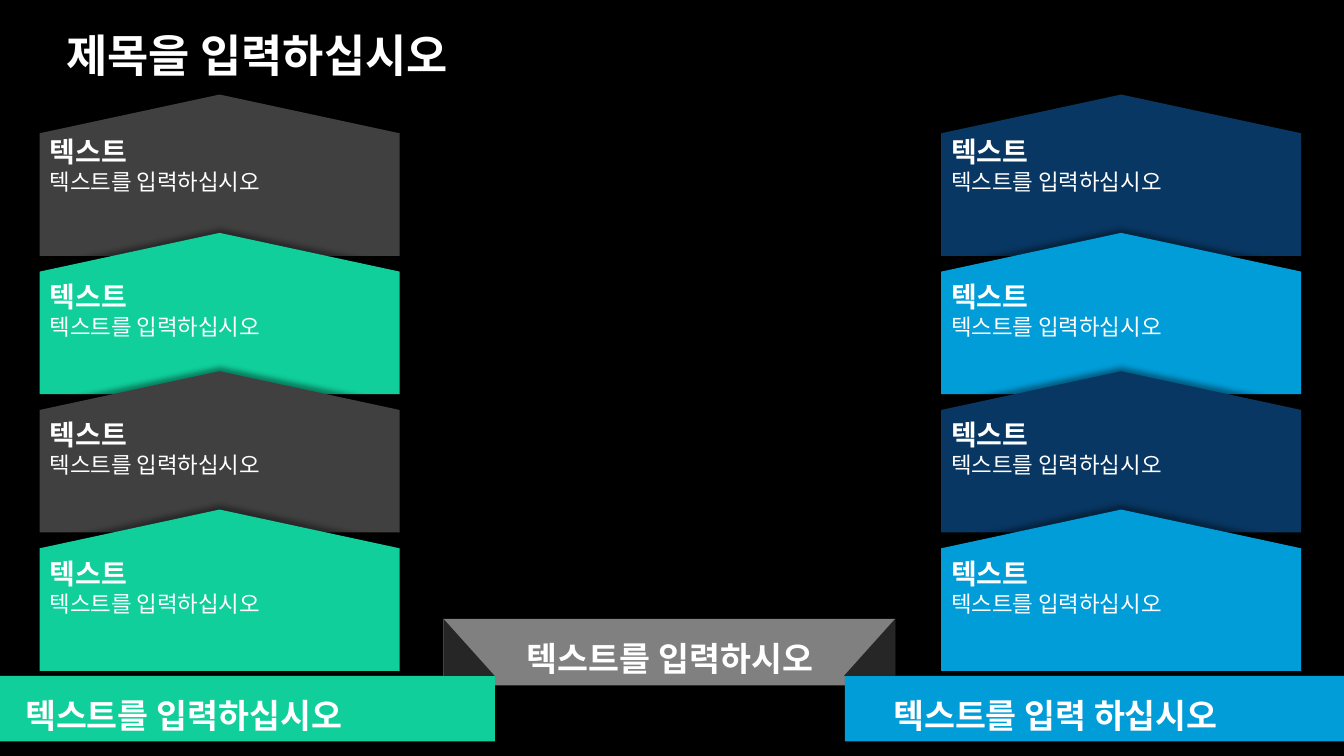
"""Build a slide with two stacked arrow pillars and three labelled bands."""
import pptx
import pptx.util
import pptx.dml.color
import pptx.enum.shapes
import pptx.enum.text
import pptx.oxml
import pptx.oxml.ns
from dataclasses import dataclass

Shape = pptx.enum.shapes.MSO_SHAPE
Align = pptx.enum.text.PP_ALIGN
AutoSize = pptx.enum.text.MSO_AUTO_SIZE


@dataclass(frozen=True)
class Theme:
    font: str = "Calibri"
    background: str = "000000"
    text: str = "FFFFFF"
    gray: str = "808080"
    fold: str = "262626"
    charcoal: str = "404040"
    green: str = "10CF9B"
    navy: str = "083763"
    blue: str = "009DD9"
    title_size: int = 32
    band_size: int = 24
    heading_size: int = 20
    body_size: int = 16


theme = Theme()
deck = pptx.Presentation()
deck.slide_width = pptx.util.Inches(13.33)
deck.slide_height = pptx.util.Inches(7.5)
column = deck.slide_width / 100
row = deck.slide_height / 100
page = deck.slides.add_slide(deck.slide_layouts[5])
page.background.fill.solid()
page.background.fill.fore_color.rgb = pptx.dml.color.RGBColor.from_string(theme.background)


def add_block(kind, left, top, width, height, color):
    """Add a plain filled shape, measured in columns and rows."""
    block = page.shapes.add_shape(
        kind, round(left * column), round(top * row), round(width * column), round(height * row))
    block.shadow.inherit = False
    block.fill.solid()
    block.fill.fore_color.rgb = pptx.dml.color.RGBColor.from_string(color)
    block.line.fill.background()
    return block


def write_lines(box, lines, spacing=1.0, align=Align.LEFT):
    """Write (text, size, bold) lines into a box."""
    frame = box.text_frame
    frame.text = "\n".join(text for text, size, bold in lines)
    for para, (text, size, bold) in zip(frame.paragraphs, lines):
        para.alignment = align
        para.line_spacing = spacing
        for span in para.runs:
            span.font.name = theme.font
            span.font.size = pptx.util.Pt(size)
            span.font.bold = bold
            span.font.color.rgb = pptx.dml.color.RGBColor.from_string(theme.text)


title = page.shapes.title
title.left, title.top = round(4.2 * column), round(2.93 * row)
title.width, title.height = round(91.6 * column), round(9.47 * row)
title.text_frame.auto_size = AutoSize.NONE
title.text_frame.vertical_anchor = pptx.enum.text.MSO_ANCHOR.MIDDLE
write_lines(title, [("제목을 입력하십시오", theme.title_size, True)], 0.9)

pillar_width, tier_height, tier_step, first_tier = 26.78, 21.33, 18.3, 12.5
pillars = [
    (70.03, (theme.navy, theme.blue)),
    (2.95, (theme.charcoal, theme.green)),
]
tier_lines = [
    ("텍스트", theme.heading_size, True),
    ("텍스트를 입력하십시오", theme.body_size, False),
]
shadow_xml = (
    f'<a:outerShdw {pptx.oxml.ns.nsdecls("a")} blurRad="50800" dist="38100" dir="16200000"'
    ' rotWithShape="0"><a:srgbClr val="000000"><a:alpha val="40000"/></a:srgbClr></a:outerShdw>')

for left, colors in pillars:
    for tier in range(4):
        top = first_tier + tier * tier_step
        arrow = add_block(Shape.PENTAGON, left, top, pillar_width, tier_height, colors[tier % 2])
        center_x, center_y = arrow.left + arrow.width // 2, arrow.top + arrow.height // 2
        arrow.width, arrow.height = arrow.height, arrow.width
        arrow.left, arrow.top = center_x - arrow.width // 2, center_y - arrow.height // 2
        arrow.rotation = 270
        arrow.adjustments[0] = 0.24
        effects = arrow.element.spPr.find(pptx.oxml.ns.qn("a:effectLst"))
        effects.append(pptx.oxml.parse_xml(shadow_xml))

        inset = 5.5 if tier else 4.7
        box = page.shapes.add_textbox(
            round(left * column), round((top + inset) * row),
            round(pillar_width * column), round(9.47 * row))
        box.text_frame.word_wrap = True
        box.text_frame.auto_size = AutoSize.SHAPE_TO_FIT_TEXT
        write_lines(box, tier_lines)

bands = [
    (33, 81.87, 33.6, 8.8, theme.gray, "텍스트를 입력하시오", 37.43, 24.83, Align.CENTER),
    (0, 89.4, 36.83, 8.67, theme.green, "텍스트를 입력하십시오", 1.13, 27.31, Align.LEFT),
    (62.87, 89.4, 37.13, 8.67, theme.blue, "텍스트를 입력 하십시오", 65.72, 27.91, Align.LEFT),
]
for left, top, width, height, color, label, label_left, label_width, align in bands:
    add_block(Shape.RECTANGLE, left, top, width, height, color)
    box = page.shapes.add_textbox(
        round(label_left * column), round((top - 0.8) * row),
        round(label_width * column), round(9.47 * row))
    box.text_frame.word_wrap = False
    box.text_frame.auto_size = AutoSize.SHAPE_TO_FIT_TEXT
    write_lines(box, [(label, theme.band_size, True)], 1.5, align)

for left, apex in ((33, 0), (62.8, 1)):
    fold = add_block(Shape.ISOSCELES_TRIANGLE, left, 81.87, 3.8, 7.53, theme.fold)
    fold.adjustments[0] = apex

deck.save("out.pptx")
